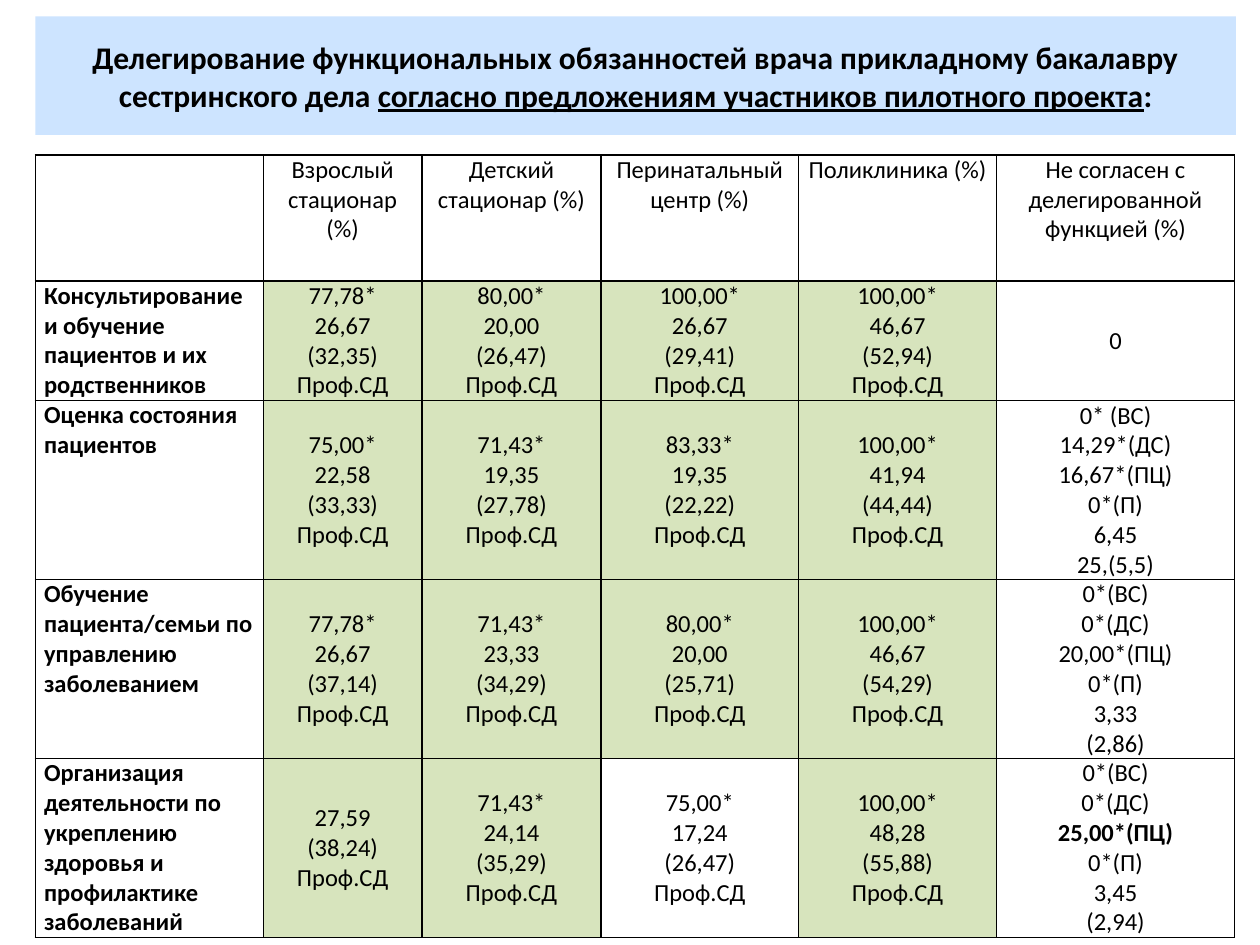
from lxml.etree import SubElement
from pptx import Presentation
from pptx.dml.color import RGBColor
from pptx.enum.text import MSO_ANCHOR, PP_ALIGN
from pptx.oxml.ns import qn
from pptx.util import Inches, Pt

FONT = "Calibri"
BLACK, BLUE, GREEN = "000000", "CDE4FF", "D7E4BD"
LEFT, WIDTH = 0.28, 9.53
TITLE = [
    ("Делегирование функциональных обязанностей врача прикладному бакалавру сестринского дела ", False),
    ("согласно предложениям участников пилотного проекта", True),
    (":", False),
]
HEADERS = [
    [],
    ["Взрослый стационар", "(%)"],
    ["Детский стационар (%)"],
    ["Перинатальный центр (%)"],
    ["Поликлиника (%)"],
    ["Не согласен с делегированной функцией (%)"],
]
STAFF = "Проф.СД"
ROWS = [
    ("Консультирование и обучение пациентов и их родственников",
     [["77,78*", "26,67", "(32,35)"], ["80,00*", "20,00", "(26,47)"],
      ["100,00*", "26,67", "(29,41)"], ["100,00*", "46,67", "(52,94)"]],
     ["0"]),
    ("Оценка состояния пациентов",
     [["75,00*", "22,58", "(33,33)"], ["71,43*", "19,35", "(27,78)"],
      ["83,33*", "19,35", "(22,22)"], ["100,00*", "41,94", "(44,44)"]],
     ["0* (ВС)", "14,29*(ДС)", "16,67*(ПЦ)", "0*(П)", "6,45", "25,(5,5)"]),
    ("Обучение пациента/семьи по управлению заболеванием",
     [["77,78*", "26,67", "(37,14)"], ["71,43*", "23,33", "(34,29)"],
      ["80,00*", "20,00", "(25,71)"], ["100,00*", "46,67", "(54,29)"]],
     ["0*(ВС)", "0*(ДС)", "20,00*(ПЦ)", "0*(П)", "3,33", "(2,86)"]),
    ("Организация деятельности по укреплению здоровья и профилактике заболеваний",
     [["27,59", "(38,24)"], ["71,43*", "24,14", "(35,29)"],
      ["75,00*", "17,24", "(26,47)"], ["100,00*", "48,28", "(55,88)"]],
     ["0*(ВС)", "0*(ДС)", "25,00*(ПЦ)", "0*(П)", "3,45", "(2,94)"]),
]
COLUMN_WIDTHS = [1.81, 1.26, 1.42, 1.57, 1.57, 1.89]
ROW_HEIGHTS = [1, 0.95, 1.42, 1.42, 1.42]
BOLD_VALUES = {"25,00*(ПЦ)"}
UNFILLED_CELLS = {(4, 3)}


def color(value):
    return RGBColor.from_string(value)


def add_run(paragraph, text, size, bold, underline=False):
    run = paragraph.add_run()
    run.text = text
    run.font.name = FONT
    run.font.size = Pt(size)
    run.font.bold = bold
    run.font.underline = underline
    run.font.color.rgb = color(BLACK)


def add_borders(cell):
    properties = cell._tc.get_or_add_tcPr()
    for side in ("lnL", "lnR", "lnT", "lnB"):
        line = SubElement(properties, qn(f"a:{side}"), w=str(Pt(1)))
        fill = SubElement(line, qn("a:solidFill"))
        SubElement(fill, qn("a:srgbClr"), val=BLACK)


def fill_cell(cell, lines, align=PP_ALIGN.CENTER, anchor=MSO_ANCHOR.MIDDLE, bold=False, fill=None):
    cell.margin_left = cell.margin_right = Inches(0.07)
    cell.margin_top = cell.margin_bottom = 0
    cell.vertical_anchor = anchor
    add_borders(cell)
    if fill:
        cell.fill.solid()
        cell.fill.fore_color.rgb = color(fill)
    else:
        cell.fill.background()
    frame = cell.text_frame
    for index, text in enumerate(lines):
        paragraph = frame.add_paragraph() if index else frame.paragraphs[0]
        paragraph.alignment = align
        add_run(paragraph, text, 14, bold or text in BOLD_VALUES)


def add_title(slide):
    title = slide.shapes.title
    title.left, title.top = Inches(LEFT), Inches(0.13)
    title.width, title.height = Inches(WIDTH), Inches(0.94)
    title.fill.solid()
    title.fill.fore_color.rgb = color(BLUE)
    title.text_frame.vertical_anchor = MSO_ANCHOR.MIDDLE
    title.text_frame.word_wrap = True
    paragraph = title.text_frame.paragraphs[0]
    paragraph.alignment = PP_ALIGN.CENTER
    for text, underline in TITLE:
        add_run(paragraph, text, 18, True, underline)


def add_duties_table(slide):
    table = slide.shapes.add_table(
        len(ROW_HEIGHTS), len(COLUMN_WIDTHS), Inches(LEFT), Inches(1.23),
        Inches(WIDTH), Inches(sum(ROW_HEIGHTS))).table
    table.first_row = table.horz_banding = False
    for column, width in zip(table.columns, COLUMN_WIDTHS):
        column.width = Inches(width)
    for row, height in zip(table.rows, ROW_HEIGHTS):
        row.height = Inches(height)
    for column, lines in enumerate(HEADERS):
        fill_cell(table.cell(0, column), lines, anchor=MSO_ANCHOR.TOP)
    for row, (duty, shares, disagreement) in enumerate(ROWS, start=1):
        fill_cell(table.cell(row, 0), [duty], PP_ALIGN.LEFT, MSO_ANCHOR.TOP, bold=True)
        for column, values in enumerate(shares, start=1):
            fill = None if (row, column) in UNFILLED_CELLS else GREEN
            fill_cell(table.cell(row, column), values + [STAFF], fill=fill)
        fill_cell(table.cell(row, len(HEADERS) - 1), disagreement)


def main():
    presentation = Presentation()
    presentation.slide_width, presentation.slide_height = Inches(10), Inches(7.5)
    slide = presentation.slides.add_slide(presentation.slide_layouts[5])
    add_title(slide)
    add_duties_table(slide)
    presentation.save("out.pptx")


if __name__ == "__main__":
    main()
